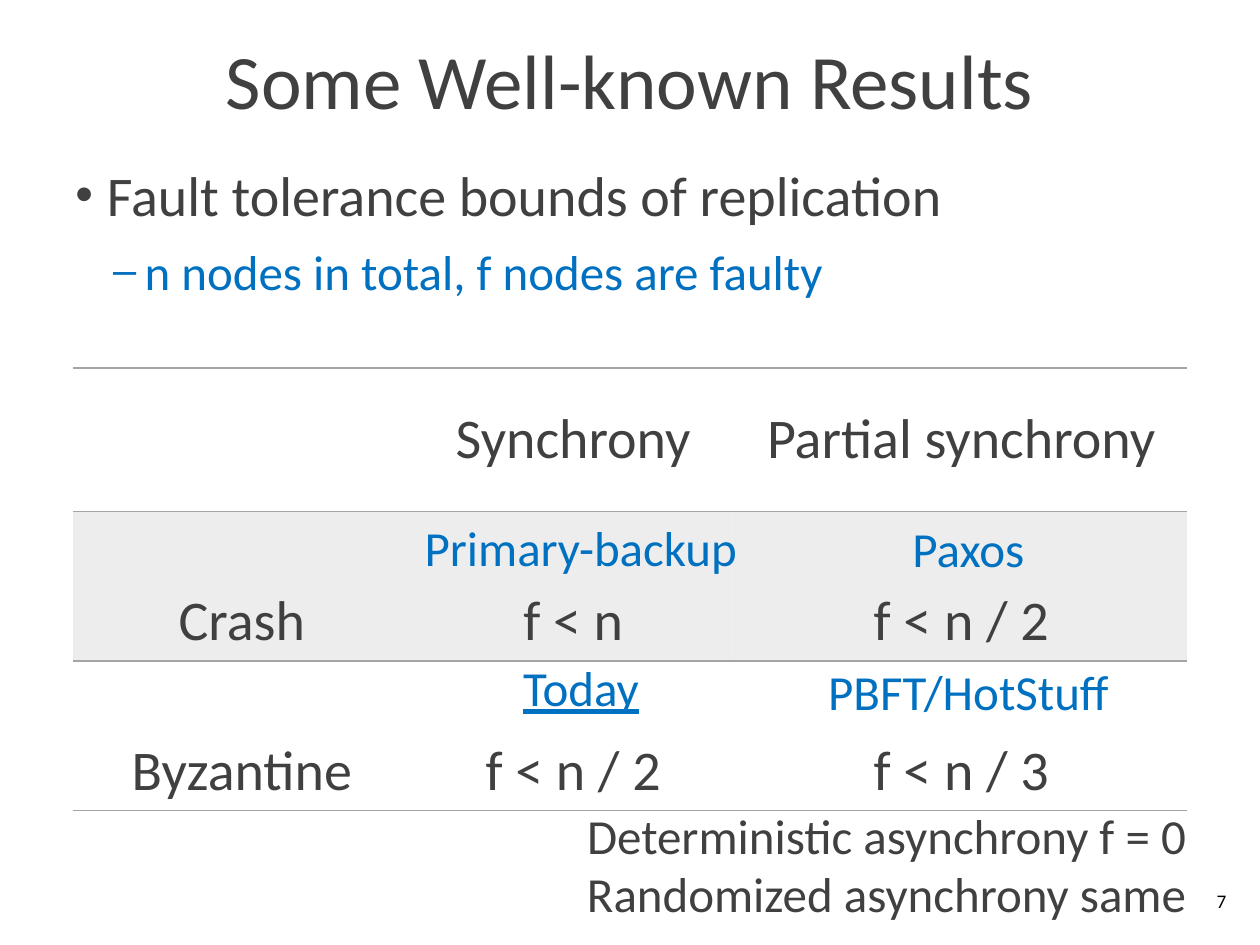
from lxml import etree
from pptx import Presentation
from pptx.dml.color import RGBColor
from pptx.enum.text import MSO_ANCHOR as ANCHOR, PP_ALIGN as ALIGN
from pptx.oxml import parse_xml
from pptx.oxml.ns import nsdecls, qn
from pptx.util import Inches, Pt

FONT = "Calibri"
DARK = RGBColor(0x40, 0x40, 0x40)
BLUE = RGBColor(0x00, 0x70, 0xC0)
GRAY = RGBColor(0xA5, 0xA5, 0xA5)
BLACK = RGBColor(0, 0, 0)
NO_STYLE = "{2D5ABB26-0587-4C30-8999-92F81FD0307C}"

TITLE = "Some Well-known Results"
# text, size, colour, bullet, bullet size %, left margin, space before
BULLETS = [
    ("Fault tolerance bounds of replication", 32, DARK, "•", 90, 0.25, 0),
    ("n nodes in total, f nodes are faulty", 28, BLUE, "–", 85, 0.55, 8),
]
BOUNDS = [
    ["", "Synchrony", "Partial synchrony"],
    ["Crash", "f < n", "f < n / 2"],
    ["Byzantine", "f < n / 2", "f < n / 3"],
]
COL_WIDTHS = [2.68, 2.58, 3.58]
ROW_HEIGHT = 1.14
# lines, box, colour, underline
LABELS = [
    (["Paxos"], (7.04, 4.07, 1.29, 0.63), BLUE, False),
    (["PBFT/HotStuff"], (6.44, 5.2, 2.49, 0.63), BLUE, False),
    (["Today"], (4.05, 5.17, 1.12, 0.57), BLUE, True),
    (["Primary-backup"], (3.26, 4.06, 2.7, 0.63), BLUE, False),
    (["Deterministic asynchrony f = 0", "Randomized asynchrony same"],
     (4.48, 6.34, 5.11, 1.04), DARK, False),
]


def style(p, size, color, align=ALIGN.CENTER, underline=False):
    p.alignment = align
    for r in p.runs:
        r.font.name = FONT
        r.font.size = Pt(size)
        r.font.color.rgb = color
        if underline:
            r.font.underline = True


def add_text(slide, box, lines, size, color, anchor=ANCHOR.TOP,
             inset=None, wrap=True, underline=False):
    tf = slide.shapes.add_textbox(*map(Inches, box)).text_frame
    tf.word_wrap = wrap
    tf.vertical_anchor = anchor
    if inset is not None:
        tf.margin_left = tf.margin_right = Inches(inset)
        tf.margin_top = tf.margin_bottom = Inches(inset)
    tf.text = "\n".join(lines)
    for p in tf.paragraphs:
        style(p, size, color, underline=underline)
    return tf


def set_bullet(p, char, percent, color, margin):
    pPr = p._p.get_or_add_pPr()
    pPr.set("marL", str(Inches(margin)))
    pPr.set("indent", str(Inches(-0.25)))
    clr = etree.SubElement(pPr, qn("a:buClr"))
    etree.SubElement(clr, qn("a:srgbClr"), val=str(color))
    etree.SubElement(pPr, qn("a:buSzPct"), val=str(percent * 1000))
    etree.SubElement(pPr, qn("a:buFont"), typeface="Arial")
    etree.SubElement(pPr, qn("a:buChar"), char=char)


def add_bullets(slide):
    tf = add_text(slide, (0.5, 1.27, 9.17, 1.71),
                  [b[0] for b in BULLETS], 32, DARK, inset=0)
    tf.margin_left = Inches(0.1)
    for p, (_, size, color, char, percent, margin, before) in zip(
            tf.paragraphs, BULLETS):
        set_bullet(p, char, percent, color, margin)
        p.space_before = Pt(before)
        style(p, size, color, ALIGN.LEFT)


def set_borders(cell, sides):
    """Draw thin gray rules on the given sides, in schema order (T, B)."""
    tcPr = cell._tc.get_or_add_tcPr()
    for i, side in enumerate(sides):
        tcPr.insert(i, parse_xml(
            f'<a:ln{side} w="12700" {nsdecls("a")}><a:solidFill>'
            f'<a:srgbClr val="{GRAY}"/></a:solidFill></a:ln{side}>'))


def shade(cell):
    cell.fill.solid()
    cell.fill.fore_color.rgb = GRAY
    clr = cell._tc.tcPr.find(f"{qn('a:solidFill')}/{qn('a:srgbClr')}")
    etree.SubElement(clr, qn("a:alpha"), val="20000")


def add_bounds_table(slide):
    rows, cols = len(BOUNDS), len(COL_WIDTHS)
    table = slide.shapes.add_table(
        rows, cols, Inches(0.58), Inches(2.92),
        Inches(sum(COL_WIDTHS)), Inches(ROW_HEIGHT * rows)).table
    table.first_row = table.horz_banding = False
    table._tbl.tblPr.find(qn("a:tableStyleId")).text = NO_STYLE
    for col, width in zip(table.columns, COL_WIDTHS):
        col.width = Inches(width)
    for i, texts in enumerate(BOUNDS):
        table.rows[i].height = Inches(ROW_HEIGHT)
        for j, text in enumerate(texts):
            cell = table.cell(i, j)
            cell.vertical_anchor = ANCHOR.MIDDLE
            cell.margin_top = cell.margin_bottom = Inches(0.06)
            cell.text = text
            p = cell.text_frame.paragraphs[0]
            style(p, 32, DARK)
            if i > 0:
                p.line_spacing = 2.0
            if i == 1:
                shade(cell)
            else:
                cell.fill.background()
            set_borders(cell, ("TB", "T", "B")[i])


def main():
    prs = Presentation()
    prs.slide_width, prs.slide_height = Inches(10), Inches(7.5)
    slide = prs.slides.add_slide(prs.slide_layouts[6])

    title = add_text(slide, (0.5, 0.36, 9, 0.64), [TITLE], 44, DARK,
                     ANCHOR.BOTTOM, inset=0)
    title.paragraphs[0].line_spacing = 0.9
    add_bullets(slide)
    add_text(slide, (9.51, 7.07, 0.37, 0.16), ["7"], 11, BLACK,
             ANCHOR.MIDDLE, inset=0)
    add_bounds_table(slide)
    for lines, box, color, underline in LABELS:
        add_text(slide, box, lines, 28, color, wrap=False, underline=underline)

    prs.save("out.pptx")


if __name__ == "__main__":
    main()
